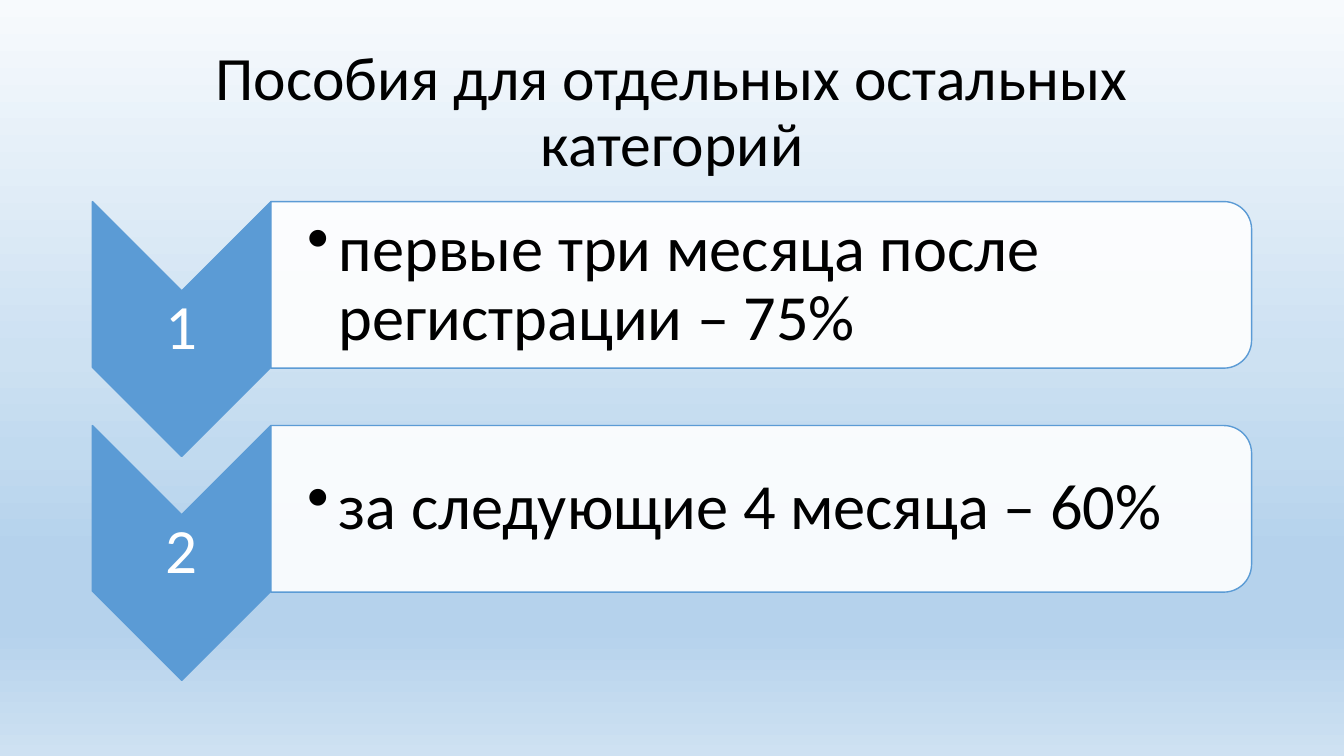
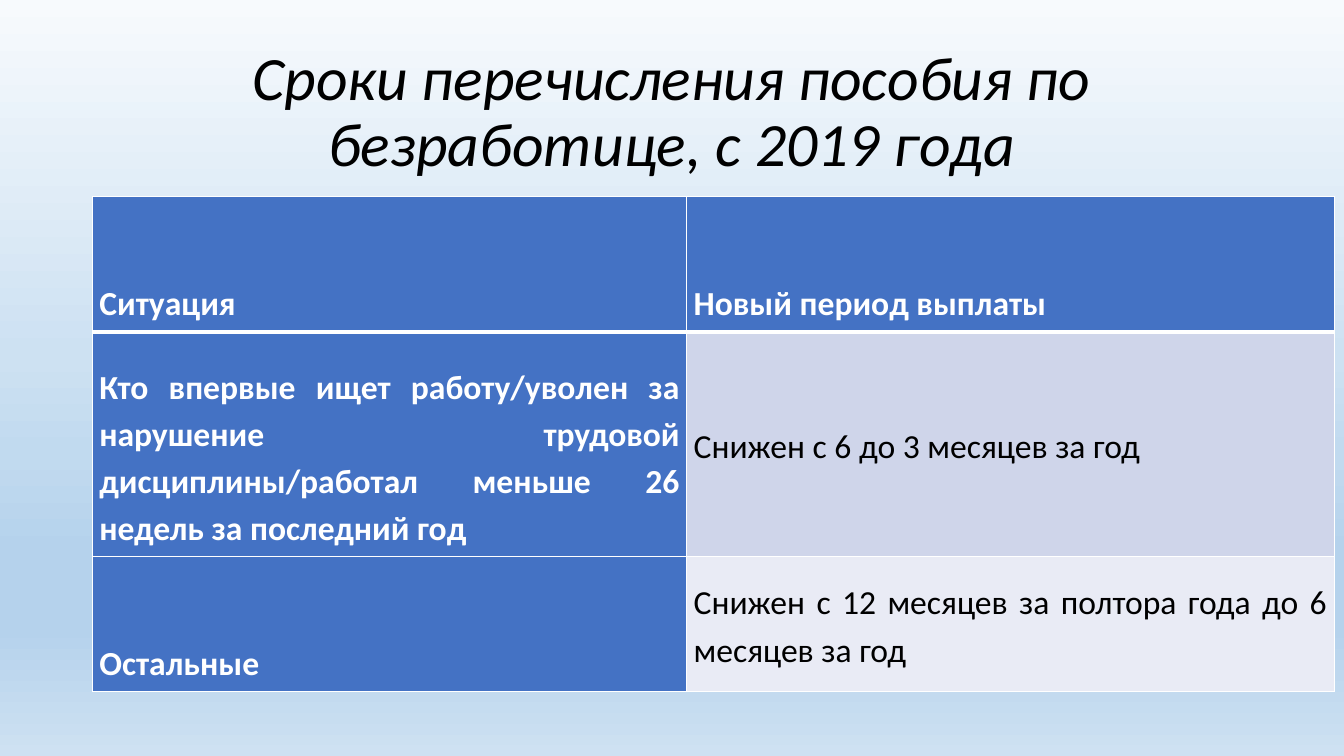
from lxml.etree import SubElement
from pptx import Presentation
from pptx.dml.color import RGBColor
from pptx.enum.shapes import MSO_SHAPE
from pptx.enum.text import MSO_ANCHOR, PP_ALIGN
from pptx.oxml.ns import qn
from pptx.util import Pt

FONT = "Calibri"
COLORS = {
    "text": "000000",
    "white": "FFFFFF",
    "step": "5B9BD5",
    "header": "4472C4",
    "row_dark": "CFD5EA",
    "row_light": "E9EBF5",
}
BACKGROUND_STOPS = [(0, "F7FAFD"), (47, "CDE1F2"), (60, "C1DAEF"),
                    (73, "B5D2EC"), (83, "B5D2EC"), (100, "CEE1F2")]
TITLE_BOX = (66, 29, 828, 104)
STEPS_BOX = (66, 144, 828, 342)
TABLE_BOX = (66, 140.5, 887, 353.5)


def rgb(name):
    return RGBColor.from_string(COLORS[name])


def paint_background(master):
    fill = master.background.fill
    fill.gradient()
    fill.gradient_angle = 270
    stops = master.element.xpath("./p:cSld/p:bg//a:gsLst")[0]
    for stop in list(stops):
        stops.remove(stop)
    for position, color in BACKGROUND_STOPS:
        stop = SubElement(stops, qn("a:gs"), pos=str(position * 1000))
        SubElement(stop, qn("a:srgbClr"), val=color)


def write(frame, text, size, color="text", align=PP_ALIGN.LEFT, anchor=MSO_ANCHOR.MIDDLE,
          spacing=0.9, bold=False, italic=False):
    """Fill the first paragraph of a frame with one run and return the paragraph."""
    frame.word_wrap = True
    frame.vertical_anchor = anchor
    para = frame.paragraphs[0]
    para.alignment = align
    para.line_spacing = spacing
    span = para.add_run()
    span.text = text
    font = span.font
    font.name, font.size, font.bold, font.italic = FONT, Pt(size), bold, italic
    font.color.rgb = rgb(color)
    return para


def add_text(page, box, text, size, margins=(7.2, 3.6, 7.2, 3.6), **style):
    frame = page.shapes.add_textbox(*map(Pt, box)).text_frame
    (frame.margin_left, frame.margin_top,
     frame.margin_right, frame.margin_bottom) = map(Pt, margins)
    return write(frame, text, size, **style)


def add_title(page, text, italic=False):
    add_text(page, TITLE_BOX, text, 44, align=PP_ALIGN.CENTER, italic=italic)


def add_turned_shape(page, kind, box, fill):
    """Add a shape turned a quarter clockwise so that it covers the given box."""
    left, top, width, height = box
    shift = (width - height) / 2
    shape = page.shapes.add_shape(kind, Pt(left + shift), Pt(top - shift), Pt(height), Pt(width))
    shape.rotation = 90
    shape.shadow.inherit = False
    shape.fill.solid()
    shape.fill.fore_color.rgb = rgb(fill)
    shape.line.color.rgb = rgb("step")
    shape.line.width = Pt(1)
    return shape


def add_bullet(para, indent):
    properties = para._p.get_or_add_pPr()
    properties.set("marL", str(Pt(indent)))
    properties.set("indent", str(-Pt(indent)))
    SubElement(properties, qn("a:buChar"), char="•")


def add_step(page, box, number, text):
    """Add a downward chevron with its number and the band beside it."""
    left, top, width, height = box
    arrow_width, band_height, inset = 127.5, 119, 2
    add_turned_shape(page, MSO_SHAPE.CHEVRON, (left, top, arrow_width, height), "step")
    notch = arrow_width / 2
    add_text(page, (left, top + notch, arrow_width, height - 2 * notch), str(number), 45,
             margins=(inset,) * 4, color="white", align=PP_ALIGN.CENTER)

    band_left, band_width = left + arrow_width, width - arrow_width
    band = add_turned_shape(page, MSO_SHAPE.ROUND_2_SAME_RECTANGLE,
                            (band_left, top, band_width, band_height), "white")
    color = band.element.spPr.find(qn("a:solidFill"))[0]
    SubElement(color, qn("a:alpha"), val="90000")
    para = add_text(page, (band_left, top + 6, band_width - 6, band_height - 12), text, 46,
                    margins=(26, inset, inset, inset))
    add_bullet(para, 22.5)


def add_steps(page, box, texts):
    left, top, width, height = box
    step_height = 182
    pitch = (height - step_height) / (len(texts) - 1)
    for index, text in enumerate(texts):
        add_step(page, (left, top + index * pitch, width, step_height), index + 1, text)


def set_borders(cell, bottom):
    properties = cell._tc.get_or_add_tcPr()
    widths = {"a:lnL": 1, "a:lnR": 1, "a:lnT": 1, "a:lnB": bottom}
    for position, (tag, width) in enumerate(widths.items()):
        line = SubElement(properties, qn(tag), w=str(Pt(width)))
        fill = SubElement(line, qn("a:solidFill"))
        SubElement(fill, qn("a:srgbClr"), val=COLORS["white"])
        properties.insert(position, line)


def add_period_table(page, box, rows):
    left, top, width, height = box
    table = page.shapes.add_table(len(rows), 2, Pt(left), Pt(top), Pt(width), Pt(height)).table
    table.horz_banding = False
    first_width, middle_height = 424.5, 160.5
    edge_height = (height - middle_height) / 2
    for column, column_width in zip(table.columns, (first_width, width - first_width)):
        column.width = Pt(column_width)
    for row, row_height in zip(table.rows, (edge_height, middle_height, edge_height)):
        row.height = Pt(row_height)

    for row_index, texts in enumerate(rows):
        for column_index, text in enumerate(texts):
            cell = table.cell(row_index, column_index)
            heading = row_index == 0 or column_index == 0
            body_fill = "row_dark" if row_index % 2 else "row_light"
            cell.margin_left = cell.margin_right = Pt(5)
            cell.margin_top = cell.margin_bottom = Pt(5)
            cell.fill.solid()
            cell.fill.fore_color.rgb = rgb("header" if heading else body_fill)
            anchor = MSO_ANCHOR.BOTTOM if heading else MSO_ANCHOR.MIDDLE
            write(cell.text_frame, text, 24, color="white" if heading else "text",
                  align=PP_ALIGN.JUSTIFY, spacing=1.15, bold=heading)
            cell.vertical_anchor = anchor
            set_borders(cell, bottom=3 if row_index == 0 else 1)


def build_rates_page(page):
    add_title(page, "Пособия для отдельных остальных категорий")
    add_steps(page, STEPS_BOX, [
        "первые три месяца после регистрации – 75%",
        "за следующие 4 месяца – 60%",
    ])


def build_periods_page(page):
    add_title(page, "Сроки перечисления пособия по безработице, с 2019 года", italic=True)
    add_period_table(page, TABLE_BOX, [
        ("Ситуация", "Новый период выплаты"),
        ("Кто впервые ищет работу/уволен за нарушение трудовой дисциплины/работал "
         "меньше 26 недель за последний год", "Снижен с 6 до 3 месяцев за год"),
        ("Остальные", "Снижен с 12 месяцев за полтора года до 6 месяцев за год"),
    ])


def main():
    deck = Presentation()
    deck.slide_width, deck.slide_height = Pt(960), Pt(540)
    paint_background(deck.slide_master)
    for build in (build_rates_page, build_periods_page):
        build(deck.slides.add_slide(deck.slide_layouts[6]))
    deck.save("out.pptx")


if __name__ == "__main__":
    main()
